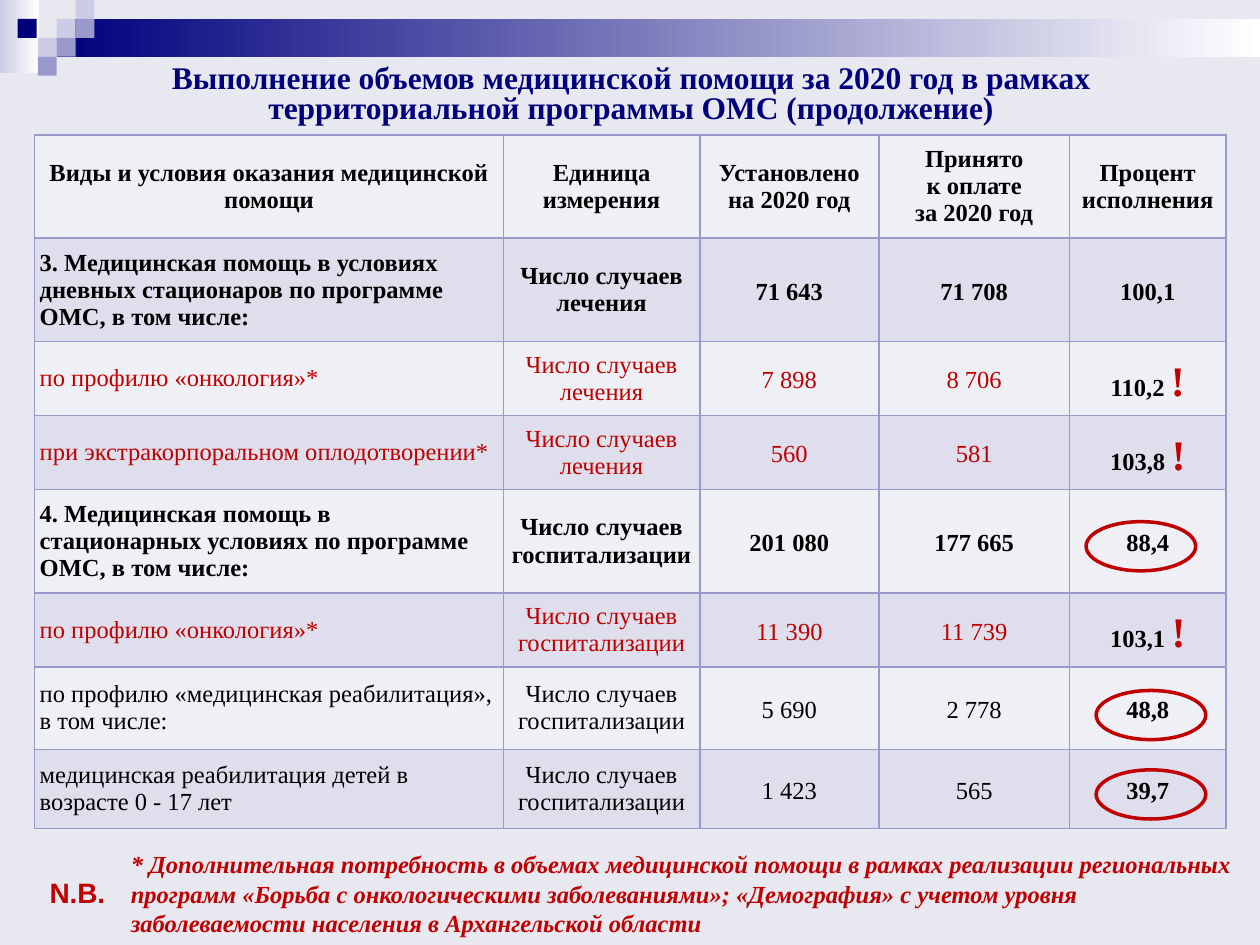
from dataclasses import dataclass

import pptx
import pptx.dml.color
import pptx.enum.shapes
import pptx.enum.text
import pptx.oxml
import pptx.oxml.ns
import pptx.util

ALIGN = pptx.enum.text.PP_ALIGN
ANCHOR = pptx.enum.text.MSO_ANCHOR
SHAPE = pptx.enum.shapes.MSO_SHAPE
CELL = 0.05  # inches per grid step: the slide is 200 columns by 150 rows


@dataclass(frozen=True)
class Theme:
    backdrop: str = "E8E8F1"
    navy: str = "00007D"
    lilac: str = "9999CC"
    pale: str = "CCCCE6"
    white: str = "FFFFFF"
    black: str = "000000"
    red: str = "C00000"
    bands: tuple = ("EFEFF6", "DEDEEC")
    serif: str = "Times New Roman"
    sans: str = "Arial"
    title: int = 18
    body: int = 14
    label: int = 16
    mark: int = 24


THEME = Theme()


def grid(steps):
    return pptx.util.Inches(steps * CELL)


def rgb(code):
    return pptx.dml.color.RGBColor.from_string(code)


def write(para, text, size=THEME.body, color=THEME.black, bold=False, italic=False,
          font=THEME.serif, align=ALIGN.LEFT, spacing=None):
    """Append text to a paragraph; each newline becomes a line break."""
    para.alignment = align
    if spacing:
        para.line_spacing = spacing
    for index, line in enumerate(text.split("\n")):
        if index:
            para.add_line_break()
        span = para.add_run()
        span.text = line
        span.font.size = pptx.util.Pt(size)
        span.font.name = font
        span.font.bold = bold
        span.font.italic = italic
        span.font.color.rgb = rgb(color)


class SlideBuilder:
    def __init__(self, slide, theme):
        self.slide = slide
        self.theme = theme
        slide.background.fill.solid()
        slide.background.fill.fore_color.rgb = rgb(theme.backdrop)

    def shape(self, kind, area):
        shape = self.slide.shapes.add_shape(kind, *map(grid, area))
        shape.shadow.inherit = False
        return shape

    def block(self, area, *colors):
        """Draw a borderless rectangle, with a gradient if two colours are given."""
        box = self.shape(SHAPE.RECTANGLE, area)
        box.line.fill.background()
        if len(colors) == 1:
            box.fill.solid()
            box.fill.fore_color.rgb = rgb(colors[0])
            return
        box.fill.gradient()
        box.fill.gradient_angle = 0
        for stop, color in zip(box.fill.gradient_stops, colors):
            stop.color.rgb = rgb(color)

    def ring(self, area):
        oval = self.shape(SHAPE.OVAL, area)
        oval.fill.background()
        oval.line.color.rgb = rgb(self.theme.red)
        oval.line.width = pptx.util.Pt(2)

    def text(self, area, text, anchor=ANCHOR.TOP, **style):
        frame = self.slide.shapes.add_textbox(*map(grid, area)).text_frame
        frame.word_wrap = True
        frame.vertical_anchor = anchor
        write(frame.paragraphs[0], text, **style)

    def border(self, cell):
        properties = cell._tc.get_or_add_tcPr()
        for index, side in enumerate(("lnL", "lnR", "lnT", "lnB")):
            line = pptx.oxml.parse_xml(
                f'<a:{side} {pptx.oxml.ns.nsdecls("a")} w="12700"><a:solidFill>'
                f'<a:srgbClr val="{self.theme.lilac}"/></a:solidFill></a:{side}>')
            properties.insert(index, line)

    def table(self, area, widths, heights, header, rows):
        table = self.slide.shapes.add_table(
            len(heights), len(widths), *map(grid, area)).table
        table.first_row = table.horz_banding = False
        for column, width in zip(table.columns, widths):
            column.width = grid(width)
        for row, height in zip(table.rows, heights):
            row.height = grid(height)
        for column, label in enumerate(header):
            para = self.cell(table, 0, column)
            write(para, label, bold=True, align=ALIGN.CENTER)
        for index, (color, bold, exceeded, *values) in enumerate(rows, 1):
            for column, value in enumerate(values):
                para = self.cell(table, index, column)
                percent = column == len(values) - 1
                style = dict(align=ALIGN.CENTER if column else ALIGN.LEFT,
                             spacing=1.15 if column > 1 else None)
                flagged = percent and exceeded
                write(para, value + " " if flagged else value,
                      color=self.theme.black if percent else color,
                      bold=bold or percent, **style)
                if flagged:
                    write(para, "!", size=self.theme.mark, color=self.theme.red,
                          bold=True, **style)

    def cell(self, table, row, column):
        """Style one cell and return its paragraph."""
        cell = table.cell(row, column)
        cell.fill.solid()
        cell.fill.fore_color.rgb = rgb(self.theme.bands[row % 2])
        cell.vertical_anchor = ANCHOR.MIDDLE
        cell.margin_left = cell.margin_right = pptx.util.Inches(0.04)
        cell.margin_top = cell.margin_bottom = pptx.util.Inches(0.06)
        self.border(cell)
        return cell.text_frame.paragraphs[0]


HEADER = ("Виды и условия оказания медицинской помощи", "Единица измерения",
          "Установлено\nна 2020 год", "Принято\nк оплате\nза 2020 год",
          "Процент исполнения")
TREATED = "Число случаев лечения"
ADMITTED = "Число случаев госпитализации"
ONCOLOGY = "по профилю «онкология»*"
# Text colour, bold, plan exceeded, then the five cells
ROWS = (
    (THEME.black, True, False,
     "3. Медицинская помощь в условиях\nдневных стационаров по программе ОМС, в том числе:",
     TREATED, "71 643", "71 708", "100,1"),
    (THEME.red, False, True, ONCOLOGY, TREATED, "7 898", "8 706", "110,2"),
    (THEME.red, False, True, "при экстракорпоральном оплодотворении*",
     TREATED, "560", "581", "103,8"),
    (THEME.black, True, False,
     "4. Медицинская помощь в стационарных условиях по программе ОМС, в том числе:",
     ADMITTED, "201 080", "177 665", "88,4"),
    (THEME.red, False, True, ONCOLOGY, ADMITTED, "11 390", "11 739", "103,1"),
    (THEME.black, False, False, "по профилю «медицинская реабилитация», в том числе:",
     ADMITTED, "5 690", "2 778", "48,8"),
    (THEME.black, False, False, "медицинская реабилитация детей в возрасте 0 - 17 лет",
     ADMITTED, "1 423", "565", "39,7"),
)


def main():
    deck = pptx.Presentation()
    deck.slide_width, deck.slide_height = grid(200), grid(150)
    page = SlideBuilder(deck.slides.add_slide(deck.slide_layouts[6]), THEME)

    page.block((0, 0, 6.2, 11.6), THEME.pale, THEME.white)
    page.block((9, 3, 191, 6), THEME.navy, THEME.white)
    squares = ((9, 3, THEME.pale), (12, 0, THEME.pale), (12, 3, THEME.lilac),
               (6, 6, THEME.pale), (2.8, 3, THEME.navy), (9, 6, THEME.lilac),
               (6, 9, THEME.lilac))
    for left, top, color in squares:
        page.block((left, top, 3, 3), color)

    page.text((10.2, 8.8, 180, 12.6),
              "Выполнение объемов медицинской помощи за 2020 год в рамках "
              "территориальной программы ОМС (продолжение)",
              anchor=ANCHOR.MIDDLE, size=THEME.title, color=THEME.navy, bold=True,
              align=ALIGN.CENTER, spacing=0.8)
    page.table((5.5, 21.4, 189, 108.8), (74.4, 31.2, 28.4, 30.3, 24.8),
               (16.4, 16.3, 11.4, 11.3, 16.2, 11.4, 13.1, 12.6), HEADER, ROWS)
    for left, top in ((172.4, 82.8), (174, 109.6), (174, 122.2)):
        page.ring((left, top, 17.4, 7.8))
    page.text((18.8, 133.8, 181.2, 16.2),
              "* Дополнительная потребность в объемах медицинской помощи в рамках "
              "реализации региональных программ «Борьба с онкологическими "
              "заболеваниями»; «Демография» c учетом уровня заболеваемости "
              "населения в Архангельской области",
              color=THEME.red, bold=True, italic=True)
    page.text((5.6, 138, 13.4, 7.4), "N.B.", size=THEME.label, color=THEME.red,
              bold=True, font=THEME.sans, align=ALIGN.CENTER)
    deck.save("out.pptx")


if __name__ == "__main__":
    main()
